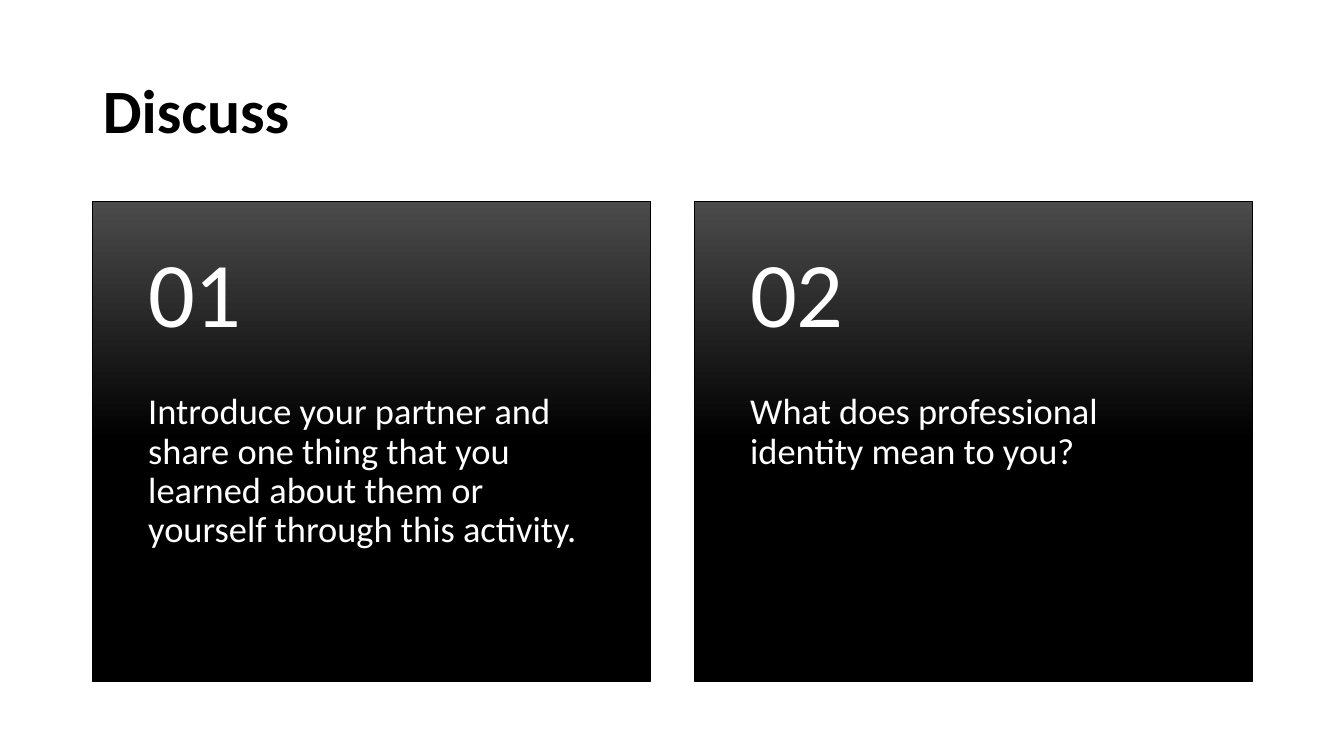
from dataclasses import dataclass

from pptx import Presentation
from pptx.dml.color import RGBColor
from pptx.enum.shapes import MSO_SHAPE
from pptx.enum.text import MSO_ANCHOR, MSO_AUTO_SIZE, PP_ALIGN
from pptx.util import Inches, Pt


@dataclass(frozen=True)
class Theme:
    font: str = "Calibri"
    dark: RGBColor = RGBColor(0, 0, 0)
    sheen: RGBColor = RGBColor(0x4B, 0x4B, 0x4B)
    light: RGBColor = RGBColor(255, 255, 255)
    title_size: int = 44
    number_size: int = 66
    body_size: int = 26


class SlideBuilder:
    def __init__(self, slide, theme):
        self.slide = slide
        self.theme = theme

    def set_text(self, shape, text, size, color, anchor, bold=False):
        frame = shape.text_frame
        frame.text = text
        frame.word_wrap = True
        frame.auto_size = MSO_AUTO_SIZE.NONE
        frame.vertical_anchor = anchor
        paragraph = frame.paragraphs[0]
        paragraph.alignment = PP_ALIGN.LEFT
        paragraph.line_spacing = 0.9
        paragraph.font.name = self.theme.font
        paragraph.font.size = Pt(size)
        paragraph.font.bold = bold
        paragraph.font.color.rgb = color

    def title(self, text, left, top, width, height):
        title = self.slide.shapes.title
        title.left, title.top = Inches(left), Inches(top)
        title.width, title.height = Inches(width), Inches(height)
        self.set_text(title, text, self.theme.title_size, self.theme.dark,
                      MSO_ANCHOR.MIDDLE, bold=True)

    def panel(self, left, top, width, height):
        panel = self.slide.shapes.add_shape(
            MSO_SHAPE.RECTANGLE, Inches(left), Inches(top), Inches(width), Inches(height))
        panel.shadow.inherit = False
        panel.fill.gradient()
        panel.fill.gradient_angle = 270
        stops = panel.fill.gradient_stops
        for stop, position, color in zip(stops, (0, 0.5), (self.theme.sheen, self.theme.dark)):
            stop.position = position
            stop.color.rgb = color
        panel.line.color.rgb = self.theme.dark
        panel.line.width = Pt(0.5)

    def text(self, text, size, left, top, width, height, anchor, inset_top, inset_bottom):
        box = self.slide.shapes.add_textbox(
            Inches(left), Inches(top), Inches(width), Inches(height))
        frame = box.text_frame
        frame.margin_left = frame.margin_right = Inches(0.55)
        frame.margin_top, frame.margin_bottom = Inches(inset_top), Inches(inset_bottom)
        self.set_text(box, text, size, self.theme.light, anchor)

    def card(self, number, question, left, top, width, height):
        number_height = 0.4 * height
        self.panel(left, top, width, height)
        self.text(question, self.theme.body_size, left, top + number_height, width,
                  height - number_height, MSO_ANCHOR.TOP, 0, 0.36)
        self.text(f"{number:02d}", self.theme.number_size, left, top, width,
                  number_height, MSO_ANCHOR.MIDDLE, 0.18, 0.18)


def main():
    presentation = Presentation()
    presentation.slide_width = Inches(13.33)
    presentation.slide_height = Inches(7.5)
    title_only = presentation.slide_layouts[5]
    builder = SlideBuilder(presentation.slides.add_slide(title_only), Theme())

    margin, content_width, card_width = 0.92, 11.5, 5.53
    builder.title("Discuss", margin, 0.4, content_width, 1.45)

    questions = (
        "Introduce your partner and share one thing that you learned about them "
        "or yourself through this activity.",
        "What does professional identity mean to you?",
    )
    card_step = content_width - card_width
    for index, question in enumerate(questions):
        builder.card(index + 1, question, margin + index * card_step, 2, card_width, 4.76)

    presentation.save("out.pptx")


if __name__ == "__main__":
    main()
